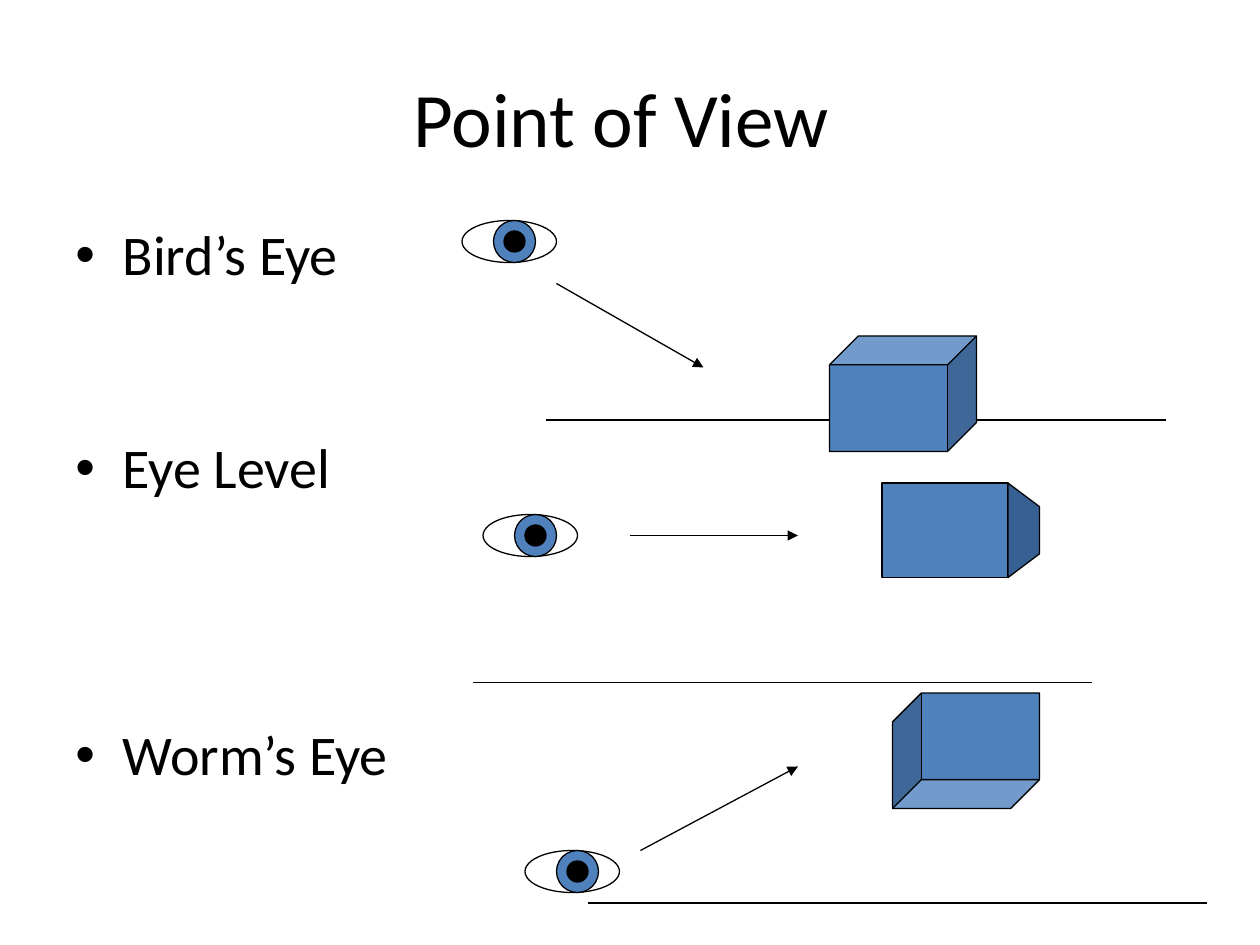
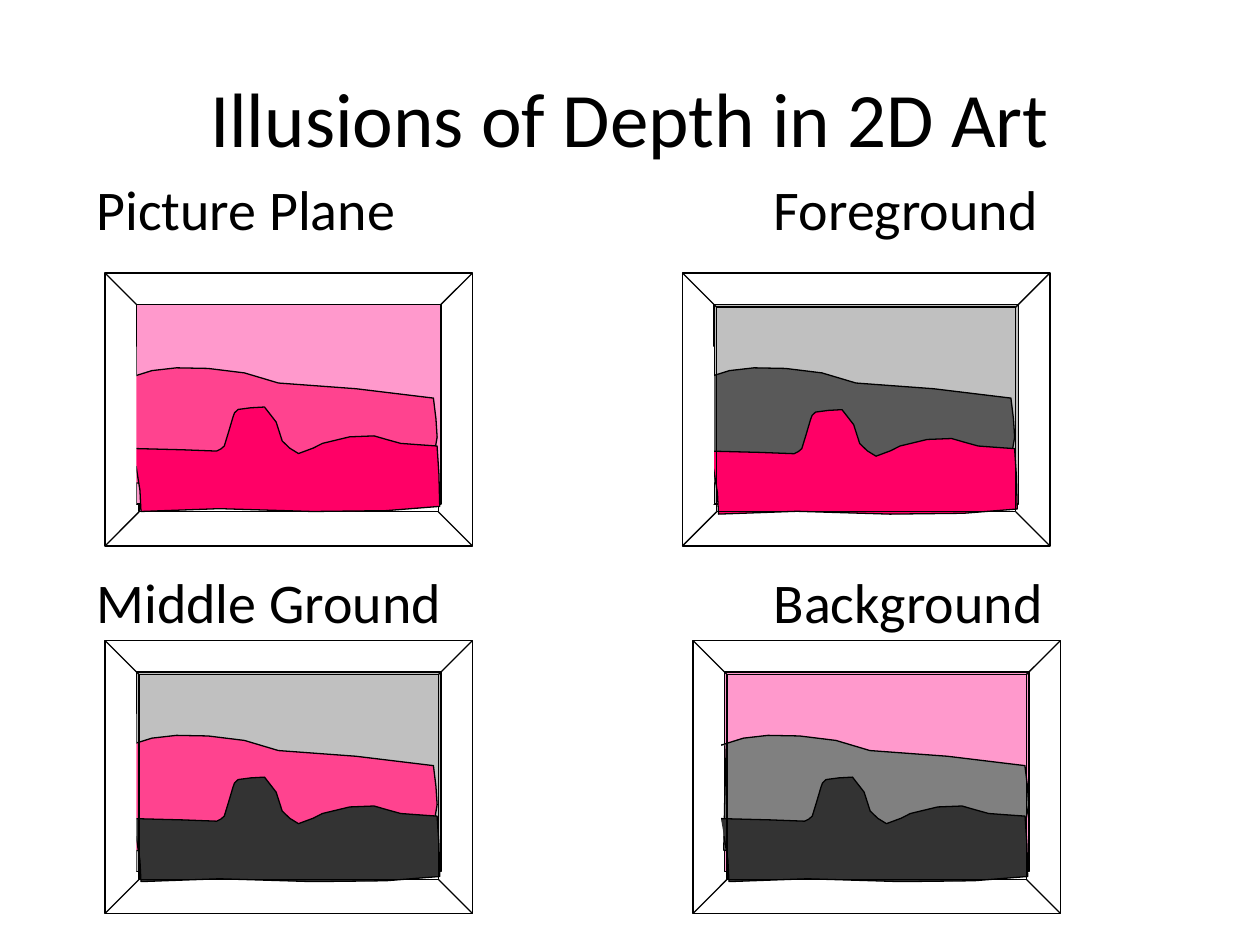
from pptx import Presentation
from pptx.dml.color import RGBColor
from pptx.enum.shapes import MSO_CONNECTOR, MSO_SHAPE
from pptx.enum.text import MSO_ANCHOR, PP_ALIGN
from pptx.oxml.ns import qn
from pptx.util import Pt
from lxml.etree import SubElement

BLACK, WHITE, BLUE, NAVY = "000000", "FFFFFF", "4F81BD", "376092"
PINK, ROSE, RED = "FF99CC", "FF438F", "FF0066"
SILVER, GRAY, SLATE, COAL = "C0C0C0", "808080", "595959", "333333"

# Landscape outlines, measured from a frame's corner: a start point,
# then three points for each Bezier curve.
HILLS = [
    (13.4, 60),
    (23.5, 55.7), (30, 55), (40.8, 54.2),
    (48, 54.2), (68.9, 54.2), (79.7, 57.1),
    (86.2, 58.6), (92.6, 61.4), (99.1, 62.9),
    (137.3, 62.2), (149.5, 69.4), (187.7, 71.5),
    (189, 80), (189.5, 87), (189.8, 93.8),
    (188.4, 106.8), (188.4, 111.8), (178.3, 118.3),
    (151.7, 136.3), (140.2, 122.6), (108.5, 123.4),
    (74.6, 127), (49.4, 121.2), (15.6, 119.8),
    (17, 105), (15, 85), (17, 60),
]
FIELD = [
    (17.8, 110.4),
    (22.8, 123.4), (17.8, 125.5), (20.6, 136.3),
    (58, 132.7), (70, 135.6), (118.6, 136.3),
    (140.2, 136.3), (184.8, 136), (191.3, 133.4),
    (191.3, 119), (190.6, 110), (189.8, 98.9),
    (183.4, 98.2), (176.2, 98.2), (169, 97.4),
    (163.9, 96), (158.9, 94.6), (153.8, 93.1),
    (149.5, 93.1), (130.8, 93.1), (124.3, 97.4),
    (122, 99), (117, 101), (110.6, 103.2),
    (107.8, 101.8), (103.4, 98.9), (101.3, 96),
    (97, 87.4), (99.8, 82.3), (91.2, 76.6),
    (86.2, 77.3), (80.4, 76.6), (76.1, 78),
    (73.9, 78.7), (73.9, 80.9), (73.2, 82.3),
    (70.3, 88.1), (71, 93.8), (68.2, 98.9),
    (67.4, 100.3), (65.3, 101), (63.8, 101.8),
    (53.8, 101.8), (38, 100.3), (16, 100.3),
]


def tint(code):
    return RGBColor.from_string(code)


def trace(knots):
    """Turn a start point and Bezier triples into middles and ends of curves."""
    points = [knots[0]]
    for i in range(1, len(knots), 3):
        curve = knots[i - 1:i + 3]
        middle = tuple(sum(w * knot[axis] for w, knot in zip((1, 3, 3, 1), curve)) / 8
                       for axis in (0, 1))
        points += [middle, curve[-1]]
    return points


class Deck:
    font = "Calibri"
    stroke = 0.75

    def __init__(self):
        self.file = Presentation()
        self.file.slide_width, self.file.slide_height = Pt(720), Pt(540)

    def page(self, title):
        self.shapes = self.file.slides.add_slide(self.file.slide_layouts[6]).shapes
        frame = self.text(36, 21.6, 648, 90)
        frame.vertical_anchor = MSO_ANCHOR.MIDDLE
        frame.paragraphs[0].alignment = PP_ALIGN.CENTER
        self.run(frame.paragraphs[0], title, 44)

    def text(self, x, y, w, h):
        frame = self.shapes.add_textbox(Pt(x), Pt(y), Pt(w), Pt(h)).text_frame
        frame.word_wrap = True
        return frame

    def run(self, para, words, size=32):
        run = para.add_run()
        run.text = words
        run.font.name, run.font.size = self.font, Pt(size)
        run.font.color.rgb = tint(BLACK)

    def label(self, x, y, words):
        self.run(self.text(x, y, 250, 46).paragraphs[0], words)

    def bullets(self, x, y, w, h, items):
        """Add a bullet list; each item is its words and the space before it."""
        frame = self.text(x, y, w, h)
        for i, (words, gap) in enumerate(items):
            para = frame.add_paragraph() if i else frame.paragraphs[0]
            para.line_spacing, para.space_before = 0.9, Pt(gap)
            props = para._p.get_or_add_pPr()
            props.set("marL", str(Pt(27)))
            props.set("indent", str(-Pt(27)))
            SubElement(props, qn("a:buFont"), typeface="Arial")
            SubElement(props, qn("a:buChar"), char="•")
            self.run(para, words)

    def paint(self, shape, fill, line=BLACK):
        shape.shadow.inherit = False
        if fill:
            shape.fill.solid()
            shape.fill.fore_color.rgb = tint(fill)
        else:
            shape.fill.background()
        if line:
            shape.line.color.rgb = tint(line)
            shape.line.width = Pt(self.stroke)
        else:
            shape.line.fill.background()
        return shape

    def shape(self, kind, x, y, w, h, fill, line=BLACK):
        shape = self.shapes.add_shape(kind, Pt(x), Pt(y), Pt(w), Pt(h))
        return self.paint(shape, fill, line)

    def free(self, points, fill, x=0, y=0, close=False):
        dots = [(Pt(x + px), Pt(y + py)) for px, py in points]
        pen = self.shapes.build_freeform(*dots[0])
        pen.add_line_segments(dots[1:], close=close)
        self.paint(pen.convert_to_shape(), fill)

    def line(self, x1, y1, x2, y2, arrow=False):
        line = self.shapes.add_connector(MSO_CONNECTOR.STRAIGHT,
                                         Pt(x1), Pt(y1), Pt(x2), Pt(y2))
        line.line.color.rgb = tint(BLACK)
        line.line.width = Pt(self.stroke)
        if arrow:
            SubElement(line.line._get_or_add_ln(), qn("a:tailEnd"), type="triangle")
        SubElement(line._element.spPr, qn("a:effectLst"))

    def eye(self, x, y):
        self.shape(MSO_SHAPE.OVAL, x, y, 54, 24, WHITE)
        self.shape(MSO_SHAPE.OVAL, x + 18, y, 24, 24, BLUE)
        self.shape(MSO_SHAPE.OVAL, x + 24, y + 6, 12, 12, BLACK)

    def cube(self, x, y, turn=0):
        self.shape(MSO_SHAPE.CUBE, x, y, 84, 66, BLUE).rotation = turn

    def frame(self, x, y):
        self.shape(MSO_SHAPE.BEVEL, x, y, 210, 156, None)

    def scene(self, x, y, sky, hills, field, under=False, hill=0, drop=1.5):
        """Draw a framed landscape; under puts the frame behind it."""
        if under:
            self.frame(x, y)
        self.shape(MSO_SHAPE.RECTANGLE, x + 18, y + 18, 174, 114, sky)
        self.free(trace(HILLS), hills, x + hill, y)
        self.free(trace(FIELD), field, x, y + drop)
        if not under:
            self.frame(x, y)
        self.shape(MSO_SHAPE.RECTANGLE, x + 6 - hill, y + 42, 12, 90, WHITE, None)


def view(deck):
    deck.page("Point of View ")
    deck.bullets(36, 126, 648, 356,
                 [("Bird’s Eye", 0), ("Eye Level", 87.5), ("Worm’s Eye", 129)])
    for x, y in ((312, 240), (270, 390), (336, 516)):
        deck.line(x, y, x + 354, y)
    for x, y in ((264, 126), (276, 294), (300, 486)):
        deck.eye(x, y)
    for ends in ((318, 162, 402, 210), (360, 306, 456, 306), (366, 486, 456, 438)):
        deck.line(*ends, arrow=True)
    deck.cube(474, 192)
    deck.cube(510, 396, 180)
    deck.shape(MSO_SHAPE.RECTANGLE, 504, 276, 72, 54, BLUE)
    deck.free([(576, 330), (594, 316.5), (594, 289.5), (576, 276)], NAVY, close=True)


def depth(deck):
    deck.page("Illusions of Depth in 2D Art")
    names = (("Picture Plane", "Foreground"), ("Middle Ground", "Background"))
    for row, pair in enumerate(names):
        for col, name in enumerate(pair):
            deck.label(48 + 387 * col, 96 + 225 * row, name)
    deck.scene(60, 156, PINK, ROSE, RED, under=True, drop=0)
    deck.scene(390, 156, SILVER, SLATE, RED)
    deck.scene(60, 366, SILVER, ROSE, COAL)
    deck.scene(396, 366, PINK, GRAY, COAL, hill=2)


def main():
    deck = Deck()
    view(deck)
    depth(deck)
    deck.file.save("out.pptx")


if __name__ == "__main__":
    main()
